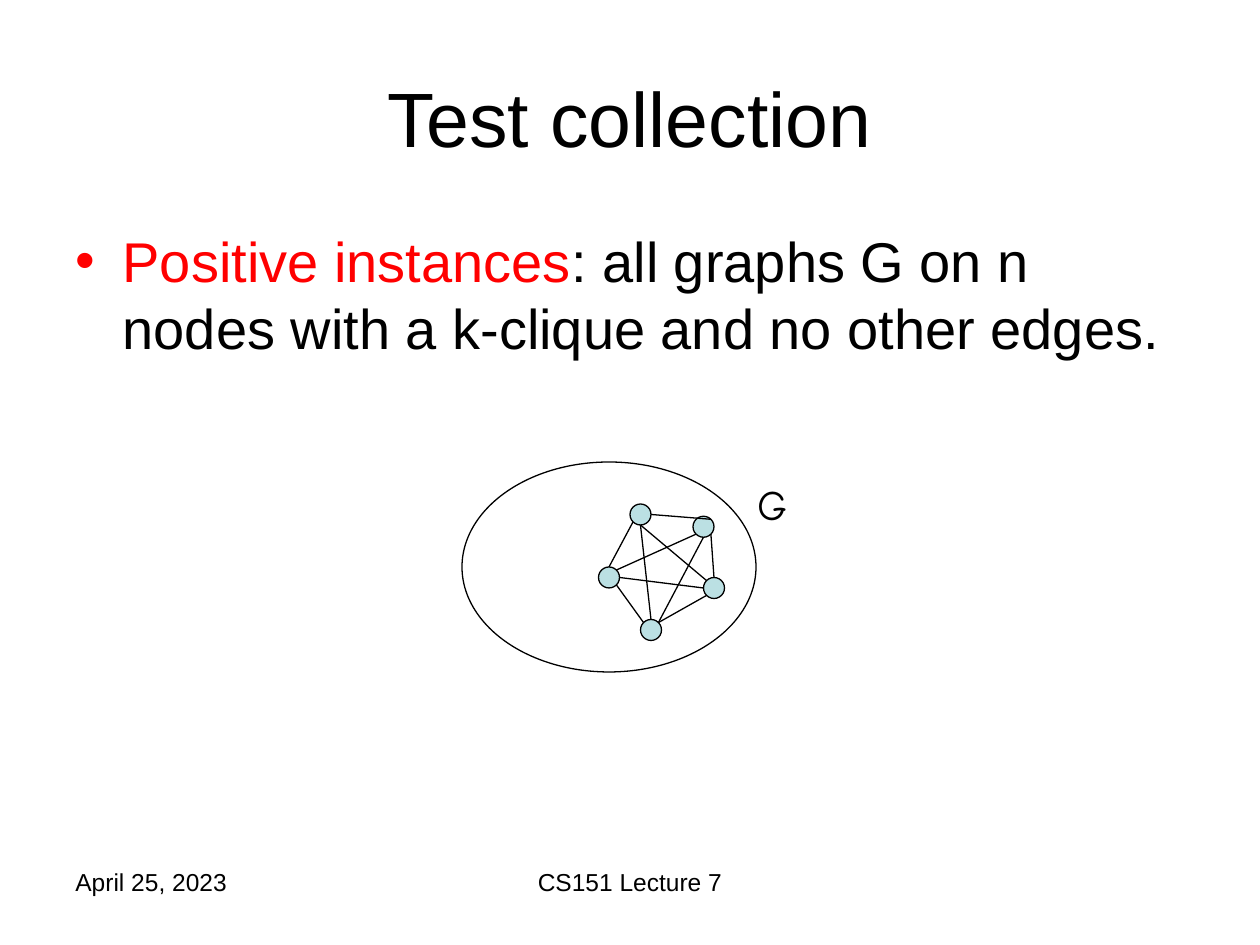
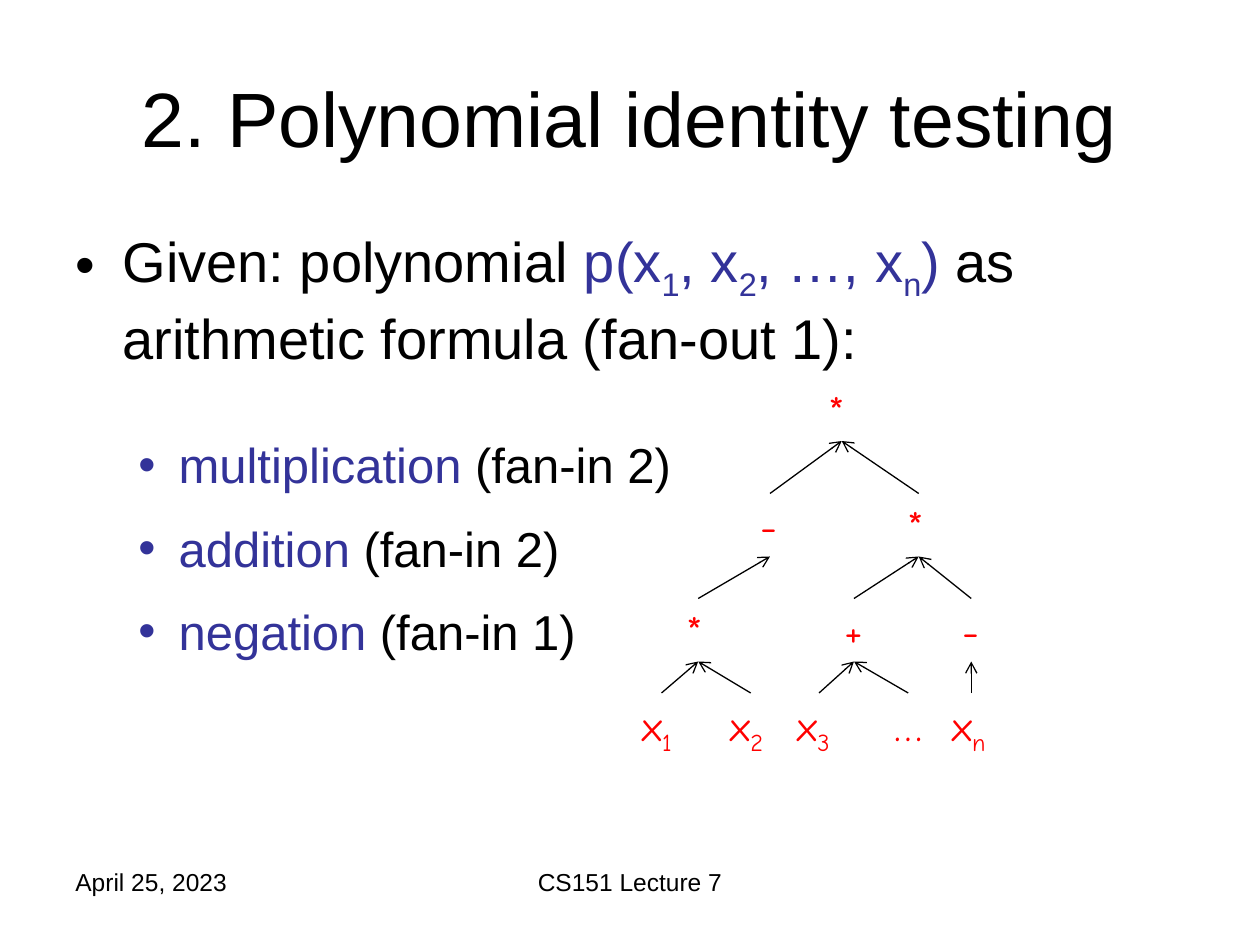
from dataclasses import dataclass
from enum import Enum
from math import sqrt
from typing import NamedTuple, Optional

from lxml.etree import SubElement
from pptx import Presentation
from pptx.dml.color import RGBColor
from pptx.enum.shapes import MSO_CONNECTOR as Connector, MSO_SHAPE as Preset
from pptx.enum.text import MSO_ANCHOR as Anchor, MSO_AUTO_SIZE as AutoSize, PP_ALIGN as Align
from pptx.oxml.ns import qn
from pptx.slide import Slide
from pptx.util import Pt

BLACK = RGBColor(0x00, 0x00, 0x00)
RED = RGBColor(0xFF, 0x00, 0x00)
INDIGO = RGBColor(0x33, 0x33, 0x99)
PALE_TEAL = RGBColor(0xBB, 0xE0, 0xE3)
SANS, HAND = "Arial", "Comic Neue"
LINE_WIDTH = 0.75
LABEL_SIZE, LABEL_HEIGHT = 24, 36
NODE_SIZE = 12
TITLE_ONLY = 5


class Box(NamedTuple):
    left: float
    top: float
    width: float
    height: float


class Point(NamedTuple):
    x: float
    y: float


class Span(NamedTuple):
    text: str
    color: RGBColor = BLACK
    subscript: bool = False


class Bullet(NamedTuple):
    indent: float
    space_before: int  # percent of a line


TITLE_BOX = Box(36, 21.6, 648, 90)
BODY_BOX = Box(36, 126, 648, 356.4)
DATE_BOX = Box(36, 492, 168, 37.5)
COURSE_BOX = Box(246, 492, 228, 37.5)
GATE_LIST_BOX = Box(72, 245, 342, 142)
MAIN_BULLET = Bullet(27, 20)
GATE_BULLET = Bullet(23, 50)


class Site(Enum):
    """Connection sites on a circle, as unit vectors from its centre."""
    TOP = (0, -1)
    BOTTOM = (0, 1)
    LEFT = (-1, 0)
    RIGHT = (1, 0)
    TOP_LEFT = (-sqrt(0.5), -sqrt(0.5))
    TOP_RIGHT = (sqrt(0.5), -sqrt(0.5))
    BOTTOM_LEFT = (-sqrt(0.5), sqrt(0.5))
    BOTTOM_RIGHT = (sqrt(0.5), sqrt(0.5))


@dataclass(frozen=True)
class Vertex:
    left: float
    top: float

    def at(self, site: Site) -> Point:
        radius = NODE_SIZE / 2
        dx, dy = site.value
        return Point(self.left + radius * (1 + dx), self.top + radius * (1 + dy))


@dataclass(frozen=True)
class Gate:
    """A node of the formula tree; wires meet it at x."""
    symbol: str
    left: float
    width: float
    x: float
    level: int
    parent: Optional["Gate"] = None
    index: str = ""


NORTH, NORTHEAST = Vertex(360, 288), Vertex(396, 295)
SOUTH, WEST, EAST = Vertex(366, 354), Vertex(342, 324), Vertex(402, 330)
CLIQUE = [NORTH, NORTHEAST, SOUTH, WEST, EAST]
CLIQUE_EDGES = [
    (NORTH, Site.RIGHT, NORTHEAST, Site.TOP_RIGHT),
    (NORTH, Site.BOTTOM_LEFT, WEST, Site.TOP),
    (WEST, Site.BOTTOM_RIGHT, SOUTH, Site.TOP_LEFT),
    (SOUTH, Site.TOP_RIGHT, EAST, Site.BOTTOM_LEFT),
    (EAST, Site.LEFT, WEST, Site.RIGHT),
    (NORTHEAST, Site.BOTTOM_RIGHT, EAST, Site.TOP),
    (NORTH, Site.BOTTOM, SOUTH, Site.TOP),
    (NORTHEAST, Site.BOTTOM_LEFT, WEST, Site.TOP_RIGHT),
    (EAST, Site.TOP_LEFT, NORTH, Site.BOTTOM),
    (NORTHEAST, Site.BOTTOM, SOUTH, Site.TOP_RIGHT),
]

LEVEL_TOPS = [216, 282, 342, 396]
ROOT = Gate("*", 466.5, 29, 481, 0)
NEGATED = Gate("-", 427.7, 24.5, 440, 1, ROOT)
PRODUCT = Gate("*", 511.2, 27.4, 525, 1, ROOT)
LEFT_PRODUCT = Gate("*", 385.2, 27.4, 399, 2, NEGATED)
SUM = Gate("+", 475.2, 26, 488, 2, PRODUCT)
LAST_NEGATION = Gate("-", 542.9, 24.5, 555, 2, PRODUCT)
FORMULA = [
    ROOT, NEGATED, PRODUCT, LEFT_PRODUCT, SUM, LAST_NEGATION,
    Gate("x", 360, 36, 378, 3, LEFT_PRODUCT, "1"),
    Gate("x", 410.4, 38, 429, 3, LEFT_PRODUCT, "2"),
    Gate("x", 448.6, 38, 468, 3, SUM, "3"),
    Gate("…", 504, 31, 519, 3, SUM),
    Gate("x", 537.1, 36.7, 555, 3, LAST_NEGATION, "n"),
]


def lengths(box: Box) -> list[Pt]:
    return [Pt(value) for value in box]


def add_spans(paragraph, spans: list[Span], size: float, font: str = SANS) -> None:
    for span in spans:
        run = paragraph.add_run()
        run.text = span.text
        run.font.size, run.font.name = Pt(size), font
        run.font.color.rgb = span.color
        if span.subscript:
            run._r.get_or_add_rPr().set("baseline", "-25000")


def set_space_before(paragraph, percent: int) -> None:
    spacing = SubElement(paragraph._p.get_or_add_pPr(), qn("a:spcBef"))
    SubElement(spacing, qn("a:spcPct")).set("val", str(percent * 1000))


def set_bullet(paragraph, bullet: Bullet) -> None:
    properties = paragraph._p.get_or_add_pPr()
    properties.set("marL", str(Pt(bullet.indent)))
    properties.set("indent", str(-Pt(bullet.indent)))
    set_space_before(paragraph, bullet.space_before)
    SubElement(properties, qn("a:buFont")).set("typeface", SANS)
    SubElement(properties, qn("a:buChar")).set("char", "•")


def add_text(slide: Slide, box: Box, paragraphs: list[list[Span]], size: float,
             font: str = SANS, align: Align = Align.LEFT,
             bullet: Optional[Bullet] = None, wrap: bool = True):
    frame = slide.shapes.add_textbox(*lengths(box)).text_frame
    frame.word_wrap = wrap
    for number, spans in enumerate(paragraphs):
        paragraph = frame.add_paragraph() if number else frame.paragraphs[0]
        paragraph.alignment = align
        if bullet:
            set_bullet(paragraph, bullet)
        add_spans(paragraph, spans, size, font)
    return frame


def add_label(slide: Slide, left: float, top: float, width: float,
              spans: list[Span], wrap: bool = False):
    frame = add_text(slide, Box(left, top, width, LABEL_HEIGHT), [spans],
                     LABEL_SIZE, HAND, wrap=wrap)
    frame.auto_size = AutoSize.SHAPE_TO_FIT_TEXT
    return frame


def add_ellipse(slide: Slide, box: Box, fill: Optional[RGBColor] = None) -> None:
    ellipse = slide.shapes.add_shape(Preset.OVAL, *lengths(box))
    ellipse.shadow.inherit = False
    if fill is None:
        ellipse.fill.background()
    else:
        ellipse.fill.solid()
        ellipse.fill.fore_color.rgb = fill
    ellipse.line.color.rgb = BLACK
    ellipse.line.width = Pt(LINE_WIDTH)


def add_line(slide: Slide, start: Point, end: Point, arrow: bool = False) -> None:
    line = slide.shapes.add_connector(
        Connector.STRAIGHT, *(Pt(value) for value in (*start, *end)))
    line.line.color.rgb = BLACK
    line.line.width = Pt(LINE_WIDTH)
    if arrow:
        SubElement(line.line._get_or_add_ln(), qn("a:tailEnd")).set("type", "arrow")
    SubElement(line._element.spPr, qn("a:effectLst"))


def add_lecture_slide(deck, title: str, body: list[Span]) -> Slide:
    """Add a slide with title, bulleted statement, date and course footer."""
    slide = deck.slides.add_slide(deck.slide_layouts[TITLE_ONLY])
    heading = slide.shapes.title
    heading.left, heading.top, heading.width, heading.height = lengths(TITLE_BOX)
    frame = heading.text_frame
    frame.word_wrap, frame.auto_size = True, AutoSize.NONE
    frame.vertical_anchor = Anchor.MIDDLE
    frame.paragraphs[0].alignment = Align.CENTER
    add_spans(frame.paragraphs[0], [Span(title)], 44)
    add_text(slide, BODY_BOX, [body], 32, bullet=MAIN_BULLET)
    add_text(slide, DATE_BOX, [[Span("April 25, 2023")]], 14)
    add_text(slide, COURSE_BOX, [[Span("CS151 Lecture 7")]], 14, align=Align.CENTER)
    return slide


def draw_clique(slide: Slide) -> None:
    for vertex in CLIQUE:
        add_ellipse(slide, Box(vertex.left, vertex.top, NODE_SIZE, NODE_SIZE), PALE_TEAL)
    for first, first_site, second, second_site in CLIQUE_EDGES:
        add_line(slide, first.at(first_site), second.at(second_site))
    add_ellipse(slide, Box(264, 264, 168, 120))
    graph_name = add_label(slide, 426, 270, 42, [Span("G")], wrap=True)
    set_space_before(graph_name.paragraphs[0], 50)


def draw_formula(slide: Slide) -> None:
    for gate in FORMULA:
        top = LEVEL_TOPS[gate.level]
        spans = [Span(gate.symbol, RED)]
        if gate.index:
            spans.append(Span(gate.index, RED, subscript=True))
        add_label(slide, gate.left, top, gate.width, spans)
        if gate.parent:
            parent_bottom = LEVEL_TOPS[gate.parent.level] + LABEL_HEIGHT
            add_line(slide, Point(gate.x, top), Point(gate.parent.x, parent_bottom), arrow=True)


def main() -> None:
    deck = Presentation()
    deck.slide_width, deck.slide_height = Pt(720), Pt(540)

    collection = add_lecture_slide(deck, "Test collection", [
        Span("Positive instances", RED),
        Span(": all graphs G on n nodes with a k-clique and no other edges."),
    ])
    draw_clique(collection)

    testing = add_lecture_slide(deck, "2. Polynomial identity testing", [
        Span("Given: polynomial "),
        Span("p(x", INDIGO), Span("1", INDIGO, True),
        Span(", x", INDIGO), Span("2", INDIGO, True),
        Span(", …, x", INDIGO), Span("n", INDIGO, True),
        Span(")", INDIGO),
        Span(" as arithmetic formula (fan-out 1):"),
    ])
    draw_formula(testing)
    fan_ins = {"multiplication": 2, "addition": 2, "negation": 1}
    add_text(testing, GATE_LIST_BOX,
             [[Span(gate, INDIGO), Span(f" (fan-in {fan_in})")]
              for gate, fan_in in fan_ins.items()],
             28, bullet=GATE_BULLET)

    deck.save("out.pptx")


if __name__ == "__main__":
    main()
